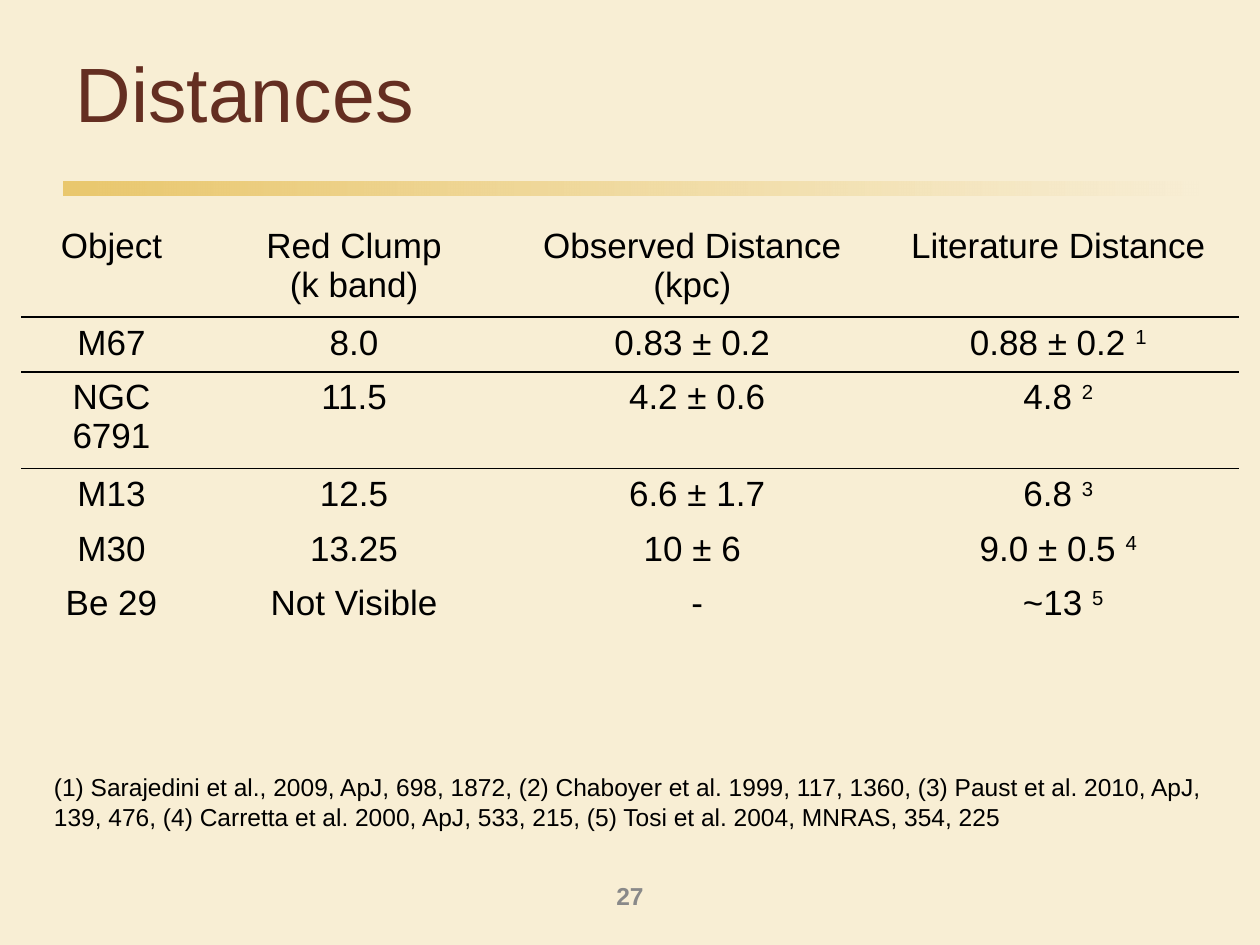
from lxml import etree
from pptx import Presentation
from pptx.dml.color import RGBColor
from pptx.enum.shapes import MSO_SHAPE
from pptx.enum.text import MSO_ANCHOR, PP_ALIGN
from pptx.oxml import parse_xml
from pptx.oxml.ns import nsdecls, qn
from pptx.util import Inches, Pt

RECT = MSO_SHAPE.RECTANGLE
TOP = MSO_ANCHOR.TOP
LEFT, CENTER = PP_ALIGN.LEFT, PP_ALIGN.CENTER
NO_STYLE = "{2D5ABB26-0587-4C30-8999-92F81FD0307C}"

COLUMNS = [1.43, 2.42, 2.95, 2.86]
ROW_HEIGHT = 0.41
RULED_ROWS = {0: ("b",), 1: ("t", "b"), 2: ("t",)}
ROWS = [
    ("Object", "Red Clump\n(k band)", "Observed Distance (kpc)", "Literature Distance", ""),
    ("M67", "8.0", "0.83 ± 0.2", "0.88 ± 0.2 ", "1"),
    ("NGC 6791", "11.5", " 4.2 ± 0.6", "4.8 ", "2"),
    ("M13", "12.5", " 6.6 ± 1.7", "6.8 ", "3"),
    ("M30", "13.25", " 10 ± 6 ", "9.0 ± 0.5 ", "4"),
    ("Be 29", "Not Visible", " -", " ~13 ", "5"),
]
REFERENCES = (
    "(1) Sarajedini et al., 2009, ApJ, 698, 1872, (2) Chaboyer et al. 1999, 117, 1360, "
    "(3) Paust et al. 2010, ApJ, 139, 476, (4) Carretta et al. 2000, ApJ, 533, 215, "
    "(5) Tosi et al. 2004, MNRAS, 354, 225"
)


def rgb(value):
    """Turn a hex string into a colour."""
    return RGBColor.from_string(value)


class Deck:
    """Hold the style and the current slide."""

    font, ink, paper = "Arial", "000000", "F8EED4"
    accent, heading, muted = "E5BB4C", "642E21", "898989"

    def __init__(self, prs):
        """Start a title-only slide on the paper colour."""
        self.s = prs.slides.add_slide(prs.slide_layouts[5])
        fill = self.s.background.fill
        fill.solid()
        fill.fore_color.rgb = rgb(self.paper)

    def run(self, p, text, size, color=None, bold=False, superscript=False):
        """Add one styled run to a paragraph."""
        r = p.add_run()
        r.text = text
        r.font.name, r.font.size, r.font.bold = self.font, Pt(size), bold
        r.font.color.rgb = rgb(color or self.ink)
        if superscript:
            r.font._element.set("baseline", "30000")

    def title(self, text, *box):
        """Place and fill the title placeholder."""
        sp = self.s.shapes.title
        sp.left, sp.top, sp.width, sp.height = map(Inches, box)
        tf = sp.text_frame
        tf.vertical_anchor = TOP
        tf.margin_top = Inches(0.11)
        p = tf.paragraphs[0]
        p.alignment = LEFT
        self.run(p, text, 44, self.heading)

    def text(self, text, *box, align=LEFT, wrap=True, **style):
        """Add a one-paragraph text box."""
        sp = self.s.shapes.add_textbox(*map(Inches, box))
        tf = sp.text_frame
        tf.word_wrap = wrap
        p = tf.paragraphs[0]
        p.alignment = align
        self.run(p, text, 14, **style)

    def fading_bar(self, *box):
        """Add a bar that fades into the background."""
        sp = self.s.shapes.add_shape(RECT, *map(Inches, box))
        sp.shadow.inherit = False
        sp.line.fill.background()
        sp.fill.gradient()
        sp.fill.gradient_angle = 0
        stops = zip(sp.fill.gradient_stops, (0, 1), (self.accent, self.paper), (75, 73))
        for stop, position, color, opacity in stops:
            stop.position = position
            stop.color.rgb = rgb(color)
            clr = stop._gs.find(qn("a:srgbClr"))
            etree.SubElement(clr, qn("a:alpha")).set("val", str(opacity * 1000))

    def rule(self, cell, sides):
        """Draw thin rules on the given sides of a cell."""
        tc_pr = cell._tc.get_or_add_tcPr()
        for i, side in enumerate(sides):
            tc_pr.insert(i, parse_xml(
                f'<a:ln{side.upper()} {nsdecls("a")} w="12700"><a:solidFill>'
                f'<a:srgbClr val="{self.ink}"/></a:solidFill></a:ln{side.upper()}>'))

    def cell(self, cell, text, note, sides):
        """Fill one centred table cell with an optional note mark."""
        cell.fill.background()
        tf = cell.text_frame
        for i, line in enumerate(text.split("\n")):
            p = tf.add_paragraph() if i else tf.paragraphs[0]
            p.alignment = CENTER
            self.run(p, line, 20)
        if note:
            self.run(p, note, 20, superscript=True)
        self.rule(cell, sides)

    def table(self, rows, left, top):
        """Add the plain table with its ruled rows."""
        size = (sum(COLUMNS), ROW_HEIGHT * len(rows))
        frame = self.s.shapes.add_table(
            len(rows), len(COLUMNS), *map(Inches, (left, top, *size)))
        tbl = frame.table
        tbl.first_row = tbl.horz_banding = False
        tbl._tbl.tblPr.find(qn("a:tableStyleId")).text = NO_STYLE
        for column, width in zip(tbl.columns, COLUMNS):
            column.width = Inches(width)
        for i, (*texts, note) in enumerate(rows):
            tbl.rows[i].height = Inches(ROW_HEIGHT)
            for j, text in enumerate(texts):
                mark = note if j == len(texts) - 1 else ""
                self.cell(tbl.cell(i, j), text, mark, RULED_ROWS.get(i, ()))


def main():
    """Build and save the slide."""
    prs = Presentation()
    prs.slide_width, prs.slide_height = Inches(10), Inches(7.5)
    deck = Deck(prs)
    deck.text("27", 4.78, 6.94, 0.44, 0.33, align=CENTER, wrap=False,
              color=deck.muted, bold=True)
    deck.fading_bar(0.5, 1.44, 9.01, 0.11)
    deck.title("Distances", 0.5, 0.25, 9, 1.25)
    deck.table(ROWS, 0.17, 1.75)
    deck.text(REFERENCES, 0.33, 6.08, 9.33, 0.88)
    prs.save("out.pptx")


if __name__ == "__main__":
    main()
